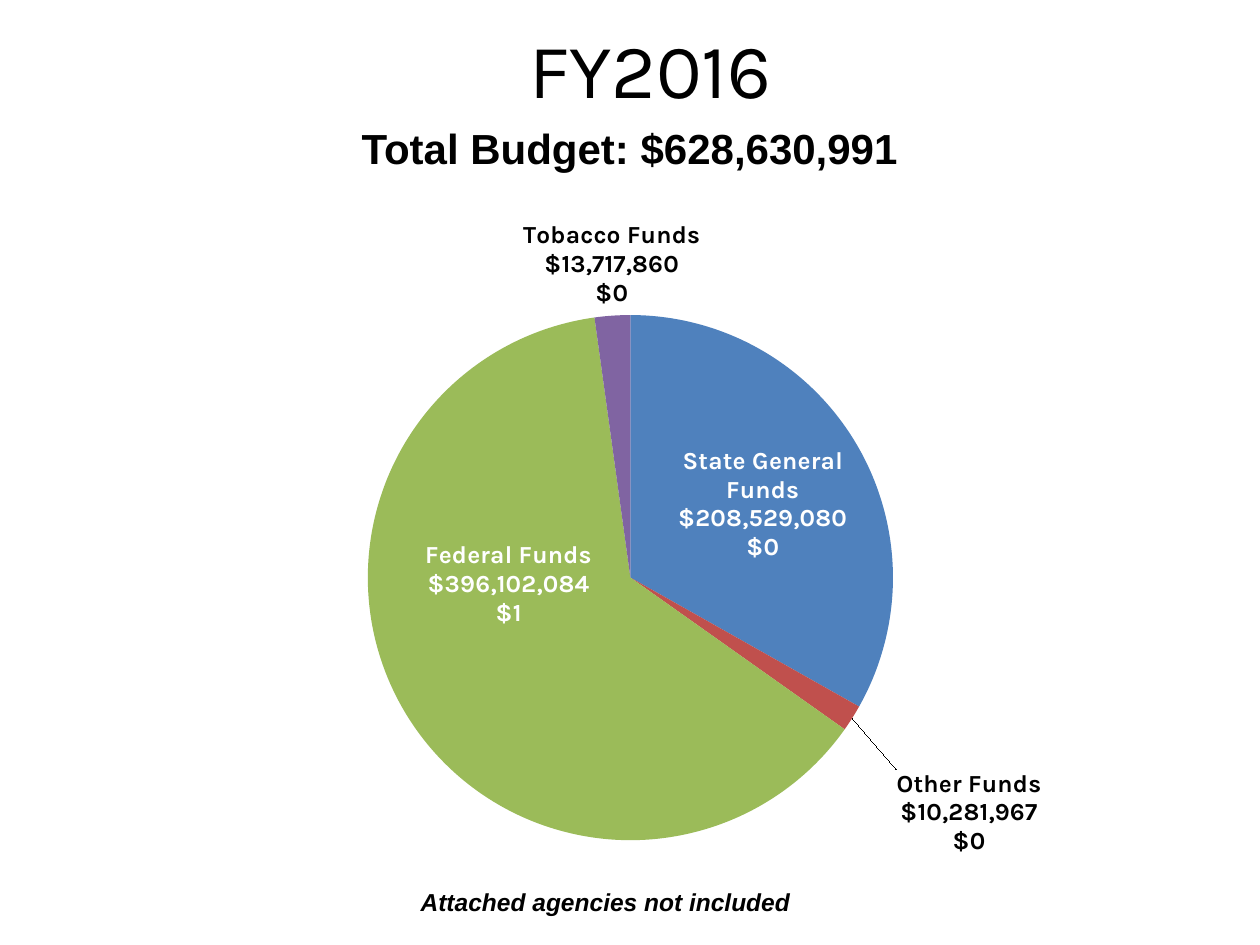
from lxml import etree
from pptx import Presentation
from pptx.chart.data import CategoryChartData
from pptx.dml.color import RGBColor
from pptx.enum.chart import XL_CHART_TYPE, XL_LABEL_POSITION
from pptx.enum.text import MSO_ANCHOR, PP_ALIGN
from pptx.oxml import parse_xml
from pptx.oxml.ns import nsdecls, qn
from pptx.util import Cm, Pt

PIE = XL_CHART_TYPE.PIE
CENTER = XL_LABEL_POSITION.CENTER
OUTSIDE = XL_LABEL_POSITION.OUTSIDE_END
MIDDLE, TOP = MSO_ANCHOR.MIDDLE, MSO_ANCHOR.TOP

BLACK = RGBColor(0x00, 0x00, 0x00)
WHITE = RGBColor(0xFF, 0xFF, 0xFF)
BLUE = RGBColor(0x4F, 0x81, 0xBD)
RED = RGBColor(0xC0, 0x50, 0x4D)
GREEN = RGBColor(0x9B, 0xBB, 0x59)
PURPLE = RGBColor(0x80, 0x64, 0xA2)

DOLLARS = '"$"#,##0'

# Fund, amount, slice colour, label colour, label position, label shift
FUNDS = [
    ("State General Funds", 208529080, BLUE, WHITE, CENTER, (0.02, -0.01)),
    ("Other Funds", 10281967, RED, BLACK, OUTSIDE, (0.04, 0.07)),
    ("Federal Funds", 396102084, GREEN, WHITE, CENTER, (-0.01, -0.09)),
    ("Tobacco Funds", 13717860, PURPLE, BLACK, OUTSIDE, None),
]


def add_text(s, text, box, size, font="Arial", align=PP_ALIGN.LEFT,
             anchor=TOP, wrap=True, bold=False, italic=False):
    tf = s.shapes.add_textbox(*map(Cm, box)).text_frame
    tf.word_wrap = wrap
    tf.vertical_anchor = anchor
    p = tf.paragraphs[0]
    p.alignment = align
    r = p.add_run()
    r.text = text
    r.font.name, r.font.size = font, Pt(size)
    r.font.bold, r.font.italic = bold, italic
    r.font.color.rgb = BLACK


def manual_layout(**values):
    """Return a c:layout element holding the given fractions of the chart."""
    parts = "".join(f'<c:{k} val="{v}"/>' for k, v in values.items())
    return parse_xml(f'<c:layout {nsdecls("c")}><c:manualLayout>{parts}'
                     '</c:manualLayout></c:layout>')


def place_plot(chart, **values):
    area = chart.element.find(".//" + qn("c:plotArea"))
    for old in area.findall(qn("c:layout")):
        area.remove(old)
    area.insert(0, manual_layout(layoutTarget="inner", xMode="edge",
                                 yMode="edge", **values))


def format_slice(series, i, fill, color, position, shift):
    """Colour one slice and label it with its fund, amount and share."""
    point = series.points[i]
    point.format.fill.solid()
    point.format.fill.fore_color.rgb = fill
    label = point.data_label
    label.font.name, label.font.size, label.font.bold = "Karla", Pt(14), True
    label.font.color.rgb = color
    label.position = position

    d = series.data_labels._element.findall(qn("c:dLbl"))[i]
    for tag in ("showVal", "showCatName", "showPercent"):
        d.find(qn("c:" + tag)).set("val", "1")
    etree.SubElement(d, qn("c:separator")).text = "\n"
    d.insert(1, parse_xml(f'<c:numFmt {nsdecls("c")} sourceLinked="0"/>'))
    d[1].set("formatCode", DOLLARS)
    if shift:
        d.insert(1, manual_layout(x=shift[0], y=shift[1]))


def add_budget_pie(s, box):
    data = CategoryChartData(number_format=DOLLARS)
    data.categories = [fund[0] for fund in FUNDS]
    data.add_series("Series 1", [fund[1] for fund in FUNDS])
    chart = s.shapes.add_chart(PIE, *map(Cm, box), data).chart
    chart.has_title = chart.has_legend = False
    chart.font.name, chart.font.size = "Karla", Pt(10)
    chart.font.color.rgb = BLACK
    place_plot(chart, x=0.22, y=0.16, w=0.55, h=0.78)

    plot = chart.plots[0]
    plot.vary_by_categories = True
    series = plot.series[0]
    labels = series.data_labels
    labels.show_value = labels.show_category_name = True
    labels.show_percentage = True
    labels.number_format, labels.number_format_is_linked = DOLLARS, False
    labels.font.size, labels.font.bold = Pt(14), True
    for i, fund in enumerate(FUNDS):
        format_slice(series, i, *fund[2:])


def add_heading(s, left, top):
    add_text(s, "FY2016", (left, top, 24.56, 2.74), 44, font="Karla",
             align=PP_ALIGN.CENTER, anchor=MIDDLE)
    add_text(s, "Total Budget: $628,630,991",
             (left + 6.2, top + 2.34, 12.01, 1.27), 24, bold=True)


def main():
    prs = Presentation()
    prs.slide_width, prs.slide_height = Cm(25.4), Cm(19.05)
    s = prs.slides.add_slide(prs.slide_layouts[6])
    add_heading(s, 0.84, 0)
    add_budget_pie(s, (3.18, 4.09, 19.25, 13.74))
    add_text(s, "Attached agencies not included", (8.23, 17.75, 7.98, 0.86),
             14, wrap=False, bold=True, italic=True)
    prs.save("out.pptx")


if __name__ == "__main__":
    main()
